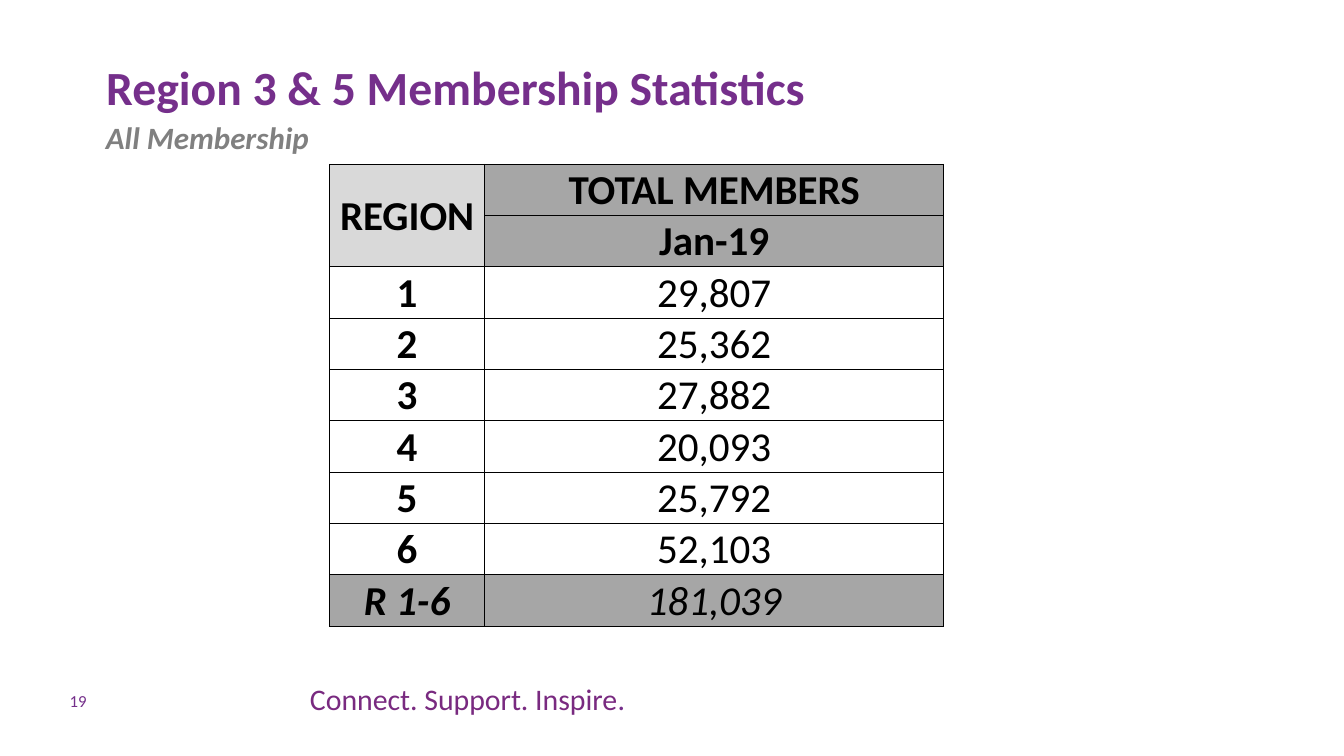
from pptx import Presentation
from pptx.dml.color import RGBColor
from pptx.enum.text import MSO_ANCHOR, MSO_AUTO_SIZE, PP_ALIGN
from pptx.oxml.ns import qn
from pptx.util import Pt
from lxml.etree import SubElement

TITLE = "Region 3 & 5 Membership Statistics"
SUBTITLE = "All Membership"
TAGLINE = ["Connect. Support. Inspire", "."]
PAGE_NUMBER = "19"
HEADER = [("REGION", "TOTAL MEMBERS"), ("", "Jan-19")]
REGIONS = [
    ("1", "29,807"),
    ("2", "25,362"),
    ("3", "27,882"),
    ("4", "20,093"),
    ("5", "25,792"),
    ("6", "52,103"),
]
TOTAL = [("R 1-6", "181,039")]

THEME = {
    "font": "Calibri",
    "purple": "752F8B", "tagline": "792A80", "gray": "808080",
    "black": "000000", "light": "D9D9D9", "dark": "A6A6A6",
    "title_size": 25.5, "subtitle_size": 16.6, "table_size": 22,
    "tagline_size": 16, "number_size": 9, "border": 0.5,
}
TEXT_LEFT, TEXT_WIDTH = 49.7, 620.6
TABLE_LEFT, TABLE_TOP = 176.6, 88
COLUMN_WIDTHS = [83, 246]
ROW_HEIGHT = 27.5


def style_font(font, size, color, bold=False, italic=False):
    """Apply the theme font with a size, colour and emphasis."""
    font.name, font.size = THEME["font"], Pt(THEME[size])
    font.bold, font.italic = bold, italic
    font.color.rgb = RGBColor.from_string(THEME[color])


def place(shape, left, top, width, height):
    """Set the position and size of a shape in points."""
    shape.left, shape.top, shape.width, shape.height = map(Pt, (left, top, width, height))


def add_label(slide, box, parts, size, colors):
    """Add a one-line text box with one run per part."""
    shape = slide.shapes.add_textbox(*map(Pt, box))
    shape.text_frame.word_wrap = True
    paragraph = shape.text_frame.paragraphs[0]
    for part, color in zip(parts, colors):
        run = paragraph.add_run()
        run.text = part
        style_font(run.font, size, color)
    return shape


def add_borders(cell):
    """Draw a thin black line on every side of a cell."""
    properties = cell._tc.get_or_add_tcPr()
    for side in ("a:lnL", "a:lnR", "a:lnT", "a:lnB"):
        line = SubElement(properties, qn(side), w=str(Pt(THEME["border"])))
        fill = SubElement(line, qn("a:solidFill"))
        SubElement(fill, qn("a:srgbClr"), val=THEME["black"])


def format_cell(cell, text, fill, anchor, bold, italic):
    """Fill one table cell with centred, bordered text."""
    add_borders(cell)
    if fill:
        cell.fill.solid()
        cell.fill.fore_color.rgb = RGBColor.from_string(THEME[fill])
    else:
        cell.fill.background()
    cell.margin_left = cell.margin_right = cell.margin_top = Pt(0.72)
    cell.margin_bottom = Pt(0)
    cell.vertical_anchor = anchor
    cell.text_frame.text = text
    paragraph = cell.text_frame.paragraphs[0]
    paragraph.alignment = PP_ALIGN.CENTER
    style_font(paragraph.font, "table_size", "black", bold, italic)
    for run in paragraph.runs:
        style_font(run.font, "table_size", "black", bold, italic)


def add_membership_table(slide):
    """Build the table of members by region."""
    rows = HEADER + REGIONS + TOTAL
    frame = slide.shapes.add_table(
        len(rows), len(COLUMN_WIDTHS), Pt(TABLE_LEFT), Pt(TABLE_TOP),
        Pt(sum(COLUMN_WIDTHS)), Pt(ROW_HEIGHT * len(rows)))
    table = frame.table
    table.first_row = table.horz_banding = False
    for column, width in zip(table.columns, COLUMN_WIDTHS):
        column.width = Pt(width)
    for row_index, row in enumerate(rows):
        table.rows[row_index].height = Pt(ROW_HEIGHT)
        is_header = row_index < len(HEADER)
        is_total = row_index == len(rows) - 1
        for column_index, text in enumerate(row):
            is_region = column_index == 0
            fill = "dark" if is_header or is_total else None
            if is_header and is_region:
                fill = "light"
            anchor = MSO_ANCHOR.BOTTOM if is_header != is_region else MSO_ANCHOR.MIDDLE
            format_cell(table.cell(row_index, column_index), text, fill, anchor,
                        is_header or is_region, is_total)
    table.cell(0, 0).merge(table.cell(len(HEADER) - 1, 0))


def main():
    """Build and save the membership slide."""
    presentation = Presentation()
    presentation.slide_width, presentation.slide_height = Pt(720), Pt(405)
    slide = presentation.slides.add_slide(presentation.slide_layouts[5])

    title = slide.shapes.title
    place(title, TEXT_LEFT, 33.1, TEXT_WIDTH, 32.4)
    title.text_frame.text = TITLE
    title.text_frame.auto_size = MSO_AUTO_SIZE.NONE
    title.text_frame.vertical_anchor = MSO_ANCHOR.BOTTOM
    heading = title.text_frame.paragraphs[0]
    heading.alignment, heading.line_spacing = PP_ALIGN.LEFT, 0.9
    style_font(heading.runs[0].font, "title_size", "purple", bold=True)

    subtitle = add_label(slide, (TEXT_LEFT, 65.5, TEXT_WIDTH, 23), [SUBTITLE],
                         "subtitle_size", ["gray"])
    paragraph = subtitle.text_frame.paragraphs[0]
    paragraph.line_spacing = 0.7
    style_font(paragraph.runs[0].font, "subtitle_size", "gray", bold=True, italic=True)

    add_membership_table(slide)
    add_label(slide, (159, 361, 258, 26.6), TAGLINE, "tagline_size", ["tagline", "purple"])
    add_label(slide, (30.2, 366.5, 38.2, 21.6), [PAGE_NUMBER], "number_size", ["purple"])
    presentation.save("out.pptx")


if __name__ == "__main__":
    main()
